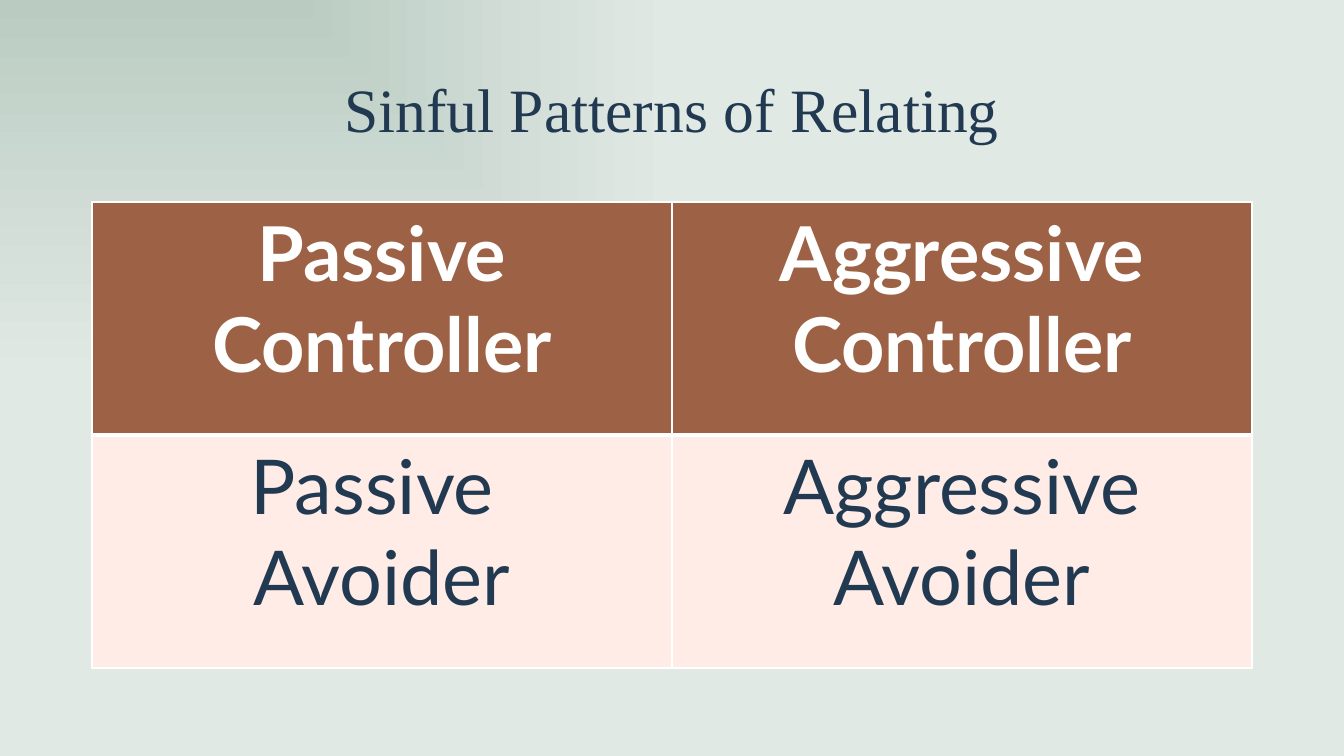
from lxml import etree
from pptx import Presentation
from pptx.dml.color import RGBColor
from pptx.enum.text import MSO_ANCHOR, PP_ALIGN
from pptx.oxml.ns import qn
from pptx.util import Pt

MIDDLE = MSO_ANCHOR.MIDDLE
CENTER = PP_ALIGN.CENTER
PX = 12192000 / 1344
COLORS = {"sage": "BACCC2", "mist": "E1E9E5", "navy": "223A51",
          "rust": "9D6246", "blush": "FFECE6", "white": "FFFFFF"}


def px(*lengths):
    return [round(n * PX) for n in lengths]


def add_run(p, text, font, size, color, bold=False):
    p.alignment = CENTER
    r = p.add_run()
    r.text = text
    r.font.name = font
    r.font.size = Pt(size)
    r.font.bold = bold
    r.font.color.rgb = RGBColor.from_string(COLORS[color])


prs = Presentation()
prs.slide_width, prs.slide_height = px(1344, 756)
s = prs.slides.add_slide(prs.slide_layouts[6])

# Background: rectangular gradient spreading from the top-left corner
fill = s.background.fill
fill.gradient()
for stop, color in zip(fill.gradient_stops, ("sage", "mist")):
    stop.color.rgb = RGBColor.from_string(COLORS[color])
grad = s.background._cSld.find(".//" + qn("a:gradFill"))
lin = grad.find(qn("a:lin"))
spread = etree.Element(qn("a:path"), path="rect")
etree.SubElement(spread, qn("a:fillToRect"), r="100000", b="100000")
grad.replace(lin, spread)

# Title
title = s.shapes.add_textbox(*px(92, 40, 1160, 146))
tf = title.text_frame
tf.word_wrap = True
tf.vertical_anchor = MIDDLE
p = tf.paragraphs[0]
p.line_spacing = 0.9
add_run(p, "Sinful Patterns of Relating", "Times New Roman", 44, "navy")

# Table: each row has its fill, text colour, bold, bottom border and cells
ROWS = [
    ("rust", "white", True, 3, [["Passive Controller"], ["Aggressive Controller"]]),
    ("blush", "navy", False, 1, [["Passive ", "Avoider"], ["Aggressive Avoider"]]),
]
table = s.shapes.add_table(2, 2, *px(92, 202, 1160, 466)).table
table.first_row = True
table.horz_banding = False
for row, (back, ink, bold, bottom, cells) in enumerate(ROWS):
    for col, lines in enumerate(cells):
        cell = table.cell(row, col)
        tcPr = cell._tc.get_or_add_tcPr()
        for side, width in (("L", 1), ("R", 1), ("T", 1), ("B", bottom)):
            ln = etree.SubElement(tcPr, qn("a:ln" + side), w=str(Pt(width)))
            solid = etree.SubElement(ln, qn("a:solidFill"))
            etree.SubElement(solid, qn("a:srgbClr"), val=COLORS["white"])
        cell.fill.solid()
        cell.fill.fore_color.rgb = RGBColor.from_string(COLORS[back])
        tf = cell.text_frame
        for i, line in enumerate(lines):
            p = tf.add_paragraph() if i else tf.paragraphs[0]
            add_run(p, line, "Lato", 54, ink, bold)

prs.save("out.pptx")
